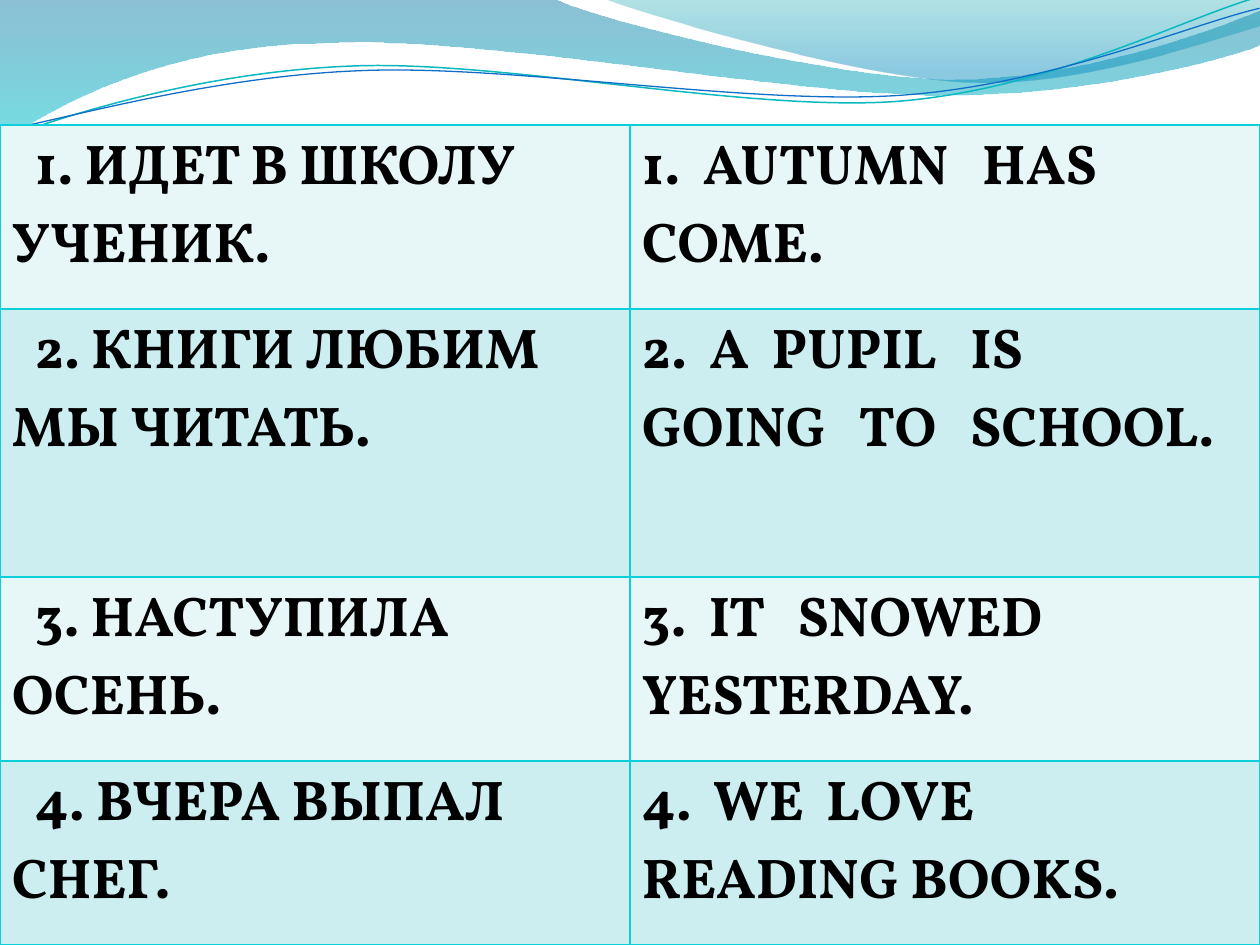
from lxml import etree
from pptx import Presentation
from pptx.dml.color import RGBColor
from pptx.oxml.ns import qn
from pptx.util import Pt

PX = 914400 / 126


def rgb(value):
    return RGBColor.from_string(value)


def add_curve(shapes, start, segments, close):
    """Draw segments of one point (straight) or three points (cubic Bezier)."""
    builder = shapes.build_freeform(*start, scale=PX)
    builder.add_line_segments([pt for seg in segments for pt in seg], close=close)
    sp = builder.convert_to_shape()
    sp.shadow.inherit = False
    nodes = iter(list(sp.element.iter(qn("a:lnTo"))))
    for seg in segments:
        group = [next(nodes) for _ in seg]
        if len(group) == 3:
            bezier = etree.Element(qn("a:cubicBezTo"))
            group[0].addprevious(bezier)
            for node in group:
                bezier.append(node[0])
                node.getparent().remove(node)
    return sp


prs = Presentation()
prs.slide_width = round(1260 * PX)
prs.slide_height = round(945 * PX)
s = prs.slides.add_slide(prs.slide_layouts[6])

# Waves: start, segments, gradient stops (position, colour, opacity in %)
waves = [
    ((0, 0),
     [[(554, -1)],
      [(600, 21), (837, 79), (955, 79)],
      [(1075, 79), (1207, 33), (1260, 11)],
      [(1261, 45)],
      [(1239, 55), (1096, 96), (940, 95)],
      [(784, 95), (481, 35), (324, 43)],
      [(163, 45), (58, 105), (-1, 142)]],
     [(0, "0074A1", 45), (1, "00C6CF", 55)]),
    ((604, -1),
     [[(641, 14), (859, 78), (969, 82)],
      [(1079, 87), (1211, 40), (1260, 26)],
      [(1260, 0)]],
     [(0, "00A1A9", 30), (0.8, "008BBF", 45)]),
]
for start, segments, stops in waves:
    sp = add_curve(s.shapes, start, segments, True)
    sp.line.fill.background()
    sp.fill.gradient()
    sp.fill.gradient_angle = 270
    for stop, (position, color, _) in zip(sp.fill.gradient_stops, stops):
        stop.position = position
        stop.color.rgb = rgb(color)
    colors = sp.element.spPr.iter(qn("a:srgbClr"))
    for clr, (_, _, opacity) in zip(colors, stops):
        etree.SubElement(clr, qn("a:alpha"), val=str(opacity * 1000))

# Thin tilted lines: start, segments, colour, width in points
lines = [
    ((-2, 110),
     [[(59, 90), (200, 52), (350, 53)],
      [(499, 53), (745, 118), (896, 114)],
      [(1049, 109), (1184, 45), (1260, 27)]],
     "0AB8BF", 0.85),
    ((-2, 101),
     [[(57, 94), (207, 57), (358, 58)],
      [(509, 58), (750, 112), (902, 108)],
      [(1052, 104), (1188, 52), (1262, 38)]],
     "0F6FC6", 0.75),
]
for start, segments, color, width in lines:
    sp = add_curve(s.shapes, start, segments, False)
    sp.rotation = 357.3
    sp.fill.background()
    sp.line.color.rgb = rgb(color)
    sp.line.width = Pt(width)

# Sentence table
sentences = [
    ("1. ИДЕТ В ШКОЛУ УЧЕНИК.", "1.  AUTUMN   HAS   COME."),
    ("2. КНИГИ ЛЮБИМ МЫ ЧИТАТЬ.", "2.  A  PUPIL   IS    GOING   TO   SCHOOL."),
    ("3. НАСТУПИЛА ОСЕНЬ.", "3.  IT   SNOWED   YESTERDAY."),
    ("4. ВЧЕРА ВЫПАЛ СНЕГ.", "4.  WE  LOVE  READING BOOKS."),
]
row_heights = [184, 268, 184, 184]
row_fills = ["E7F7F8", "CCEEF1"]
first_line_indents = [23, 0]

table = s.shapes.add_table(
    len(sentences), 2, 0, round(125 * PX),
    prs.slide_width, round(sum(row_heights) * PX)).table
table.first_row = False
table.horz_banding = False
for i, (row, height) in enumerate(zip(table.rows, row_heights)):
    row.height = round(height * PX)
    for cell, text, indent in zip(row.cells, sentences[i], first_line_indents):
        cell.margin_left = round(12 * PX)
        tcPr = cell._tc.get_or_add_tcPr()
        for side in ("a:lnL", "a:lnR", "a:lnT", "a:lnB"):
            ln = etree.SubElement(tcPr, qn(side), w=str(Pt(1)))
            fill = etree.SubElement(ln, qn("a:solidFill"))
            etree.SubElement(fill, qn("a:srgbClr"), val="0BD0D9")
        cell.fill.solid()
        cell.fill.fore_color.rgb = rgb(row_fills[i % 2])
        p = cell.text_frame.paragraphs[0]
        pPr = p._p.get_or_add_pPr()
        pPr.set("marL", "0")
        pPr.set("indent", str(round(indent * PX)))
        r = p.add_run()
        r.text = text
        r.font.name = "Vollkorn"
        r.font.size = Pt(32)
        r.font.bold = True
        r.font.color.rgb = rgb("000000")

prs.save("out.pptx")
